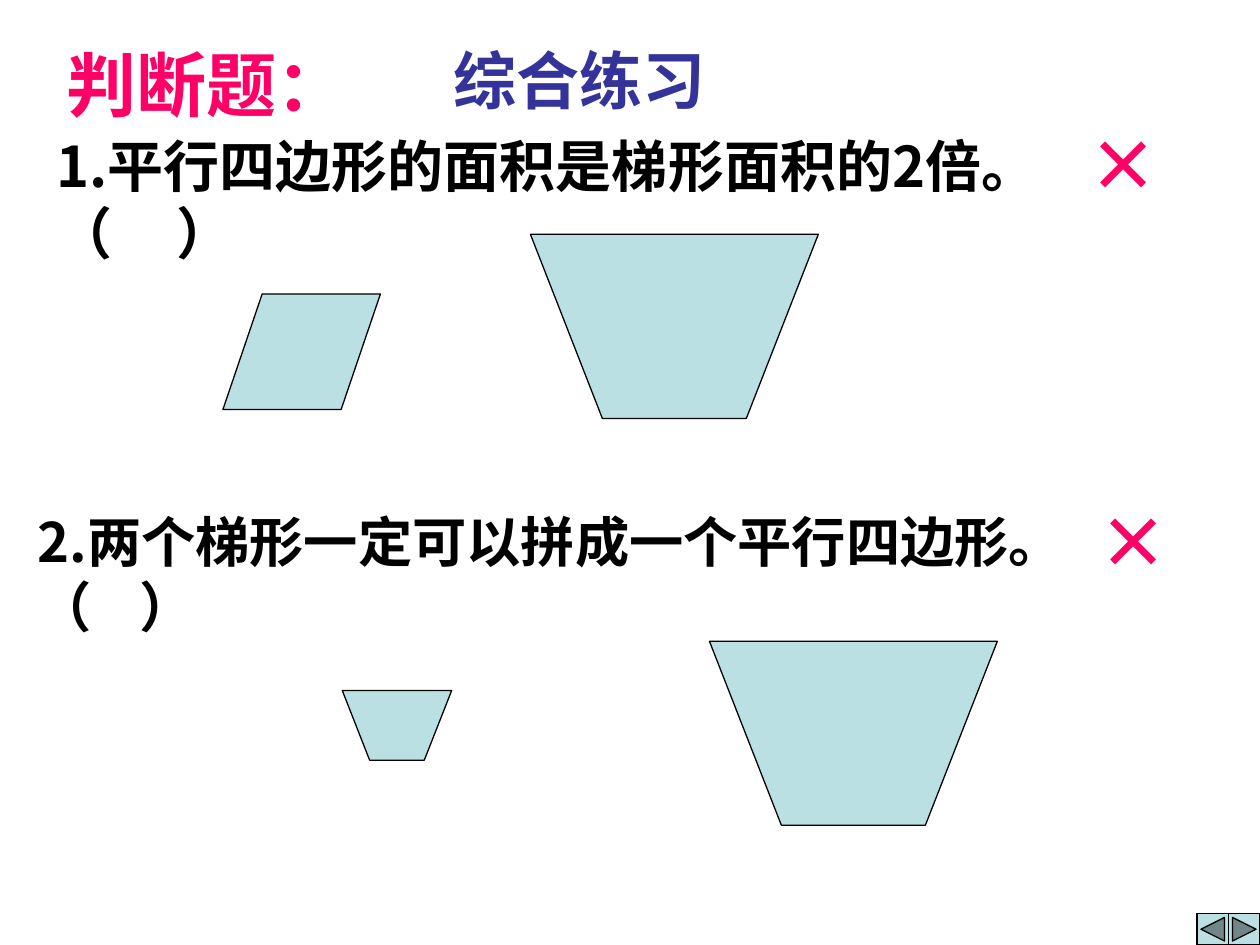
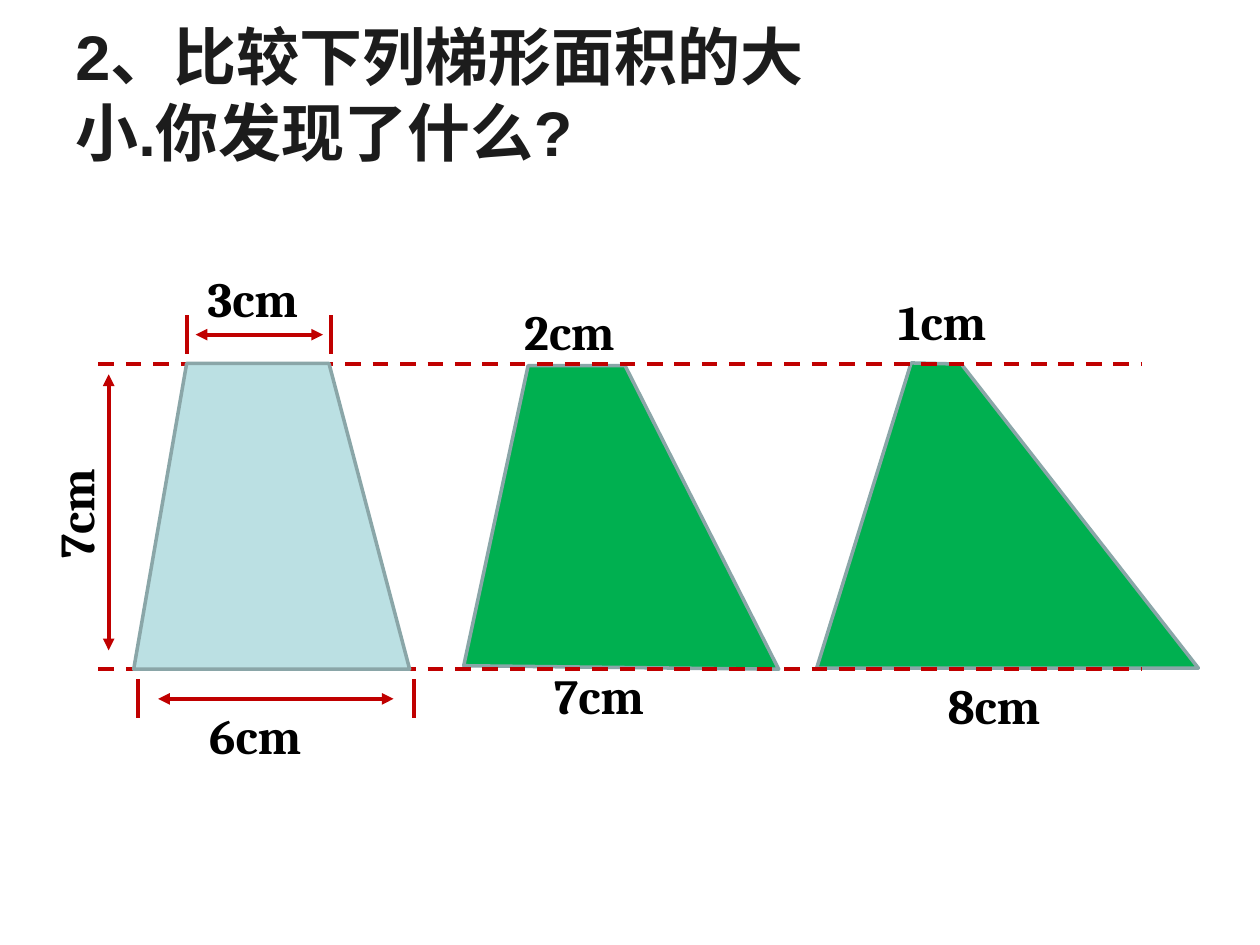
import pptx
import pptx.dml.color
import pptx.enum.dml
import pptx.enum.shapes
import pptx.enum.text
import pptx.oxml
import pptx.oxml.ns
import pptx.util
from lxml import etree

Pt = pptx.util.Pt
SHAPES = pptx.enum.shapes.MSO_SHAPE
ANCHORS = pptx.enum.text.MSO_ANCHOR

CJK_FONT = "Noto Sans CJK SC"
PINK, INDIGO, BLACK, CHARCOAL = "FF0066", "333399", "000000", "1C1C1C"
PALE_BLUE, GREEN, GREY, RED = "BBE0E3", "00B050", "8AA6A8", "C00000"
CJK_LINE_HEIGHT = 1.2
LABEL_SIZE = (84.2, 41)


def rgb(value):
    return pptx.dml.color.RGBColor.from_string(value)


def add_child(parent, tag, **attributes):
    child = etree.SubElement(parent, pptx.oxml.ns.qn(tag))
    for name, value in attributes.items():
        child.set(name, str(value))
    return child


def add_text(slide, text, left, top, width, height, size, color=BLACK,
             font=CJK_FONT, anchor=ANCHORS.TOP, tab=None, rotation=0,
             margin_right=7.2):
    box = slide.shapes.add_textbox(Pt(left), Pt(top), Pt(width), Pt(height))
    box.rotation = rotation
    frame_format = {"word_wrap": True, "vertical_anchor": anchor,
                    "margin_right": Pt(margin_right)}
    for name, value in frame_format.items():
        setattr(box.text_frame, name, value)
    paragraph = box.text_frame.paragraphs[0]
    paragraph.text = text
    if font != "Cambria":
        paragraph.line_spacing = Pt(round(size * CJK_LINE_HEIGHT, 1))
    if tab:
        properties = paragraph._p.get_or_add_pPr()
        tabs = add_child(properties, "a:tabLst")
        add_child(tabs, "a:tab", pos=Pt(tab), algn="l")
    for run in paragraph.runs:
        font_format = {"name": font, "size": Pt(size), "bold": True}
        for name, value in font_format.items():
            setattr(run.font, name, value)
        run.font.color.rgb = rgb(color)
        add_child(run._r.get_or_add_rPr(), "a:ea", typeface=CJK_FONT)


def paint(shape, fill, line, width):
    shape.shadow.inherit = False
    shape.fill.solid()
    shape.fill.fore_color.rgb = rgb(fill)
    shape.line.color.rgb = rgb(line)
    shape.line.width = Pt(width)


def add_preset(slide, kind, left, top, width, height):
    shape = slide.shapes.add_shape(kind, Pt(left), Pt(top), Pt(width), Pt(height))
    paint(shape, PALE_BLUE, BLACK, 0.75)
    return shape


def add_polygon(slide, left, top, corners, fill=PALE_BLUE, line=BLACK, width=0.75):
    points = [(Pt(left + x), Pt(top + y)) for x, y in corners]
    builder = slide.shapes.build_freeform(*points[0])
    builder.add_line_segments(points[1:], close=True)
    paint(builder.convert_to_shape(), fill, line, width)


def add_inverted_trapezoid(slide, left, top, width, height):
    corners = [(0, 0), (width / 4, height), (width * 3 / 4, height), (width, 0)]
    add_polygon(slide, left, top, corners)


def add_line(slide, start_x, start_y, end_x, end_y, dashed=False, arrows=False):
    line = slide.shapes.add_connector(
        pptx.enum.shapes.MSO_CONNECTOR.STRAIGHT,
        Pt(start_x), Pt(start_y), Pt(end_x), Pt(end_y))
    line.line.color.rgb = rgb(RED)
    line.line.width = Pt(2.25)
    if dashed:
        line.line.dash_style = pptx.enum.dml.MSO_LINE.DASH
    if arrows:
        for tag in ("a:headEnd", "a:tailEnd"):
            add_child(line.line._get_or_add_ln(), tag, type="triangle")
    add_child(line._element.spPr, "a:effectLst")


def add_question(slide, left, top, width, text, size, tab, mark_offset):
    """Add a true-or-false statement with its answer mark."""
    add_text(slide, text, left, top, width, 45, size, tab=tab)
    add_text(slide, "×", left + mark_offset, top - 5.8, 51, 55.4, 40, PINK)


def add_navigation(slide, left, top, size):
    kinds = (SHAPES.ACTION_BUTTON_BACK_OR_PREVIOUS,
             SHAPES.ACTION_BUTTON_FORWARD_OR_NEXT)
    for index, kind in enumerate(kinds):
        add_preset(slide, kind, left + index * size, top, size, size)


def add_dimension(slide, left, top, width, inset):
    """Add two end ticks with a double arrow between them."""
    tick = 22.3
    for x in (left, left + width):
        add_line(slide, x, top, x, top + tick)
    middle = top + tick / 2
    add_line(slide, left + inset, middle, left + width - inset, middle, arrows=True)


def add_comparison(slide, left, top, width, height):
    """Add three trapezoids of equal height between two dashed lines."""
    green_trapezoids = [
        [(245.6, 0.8), (301, 0.8), (388.8, height), (208.8, height - 2)],
        [(493.2, 0), (464.5, -0.7), (410.5, height - 0.6), (628.6, height - 0.6)],
    ]
    for corners in green_trapezoids:
        add_polygon(slide, left, top, corners, GREEN, GREY, 2)
    for y in (top + height, top):
        add_line(slide, left, y, left + width, y, dashed=True)
    add_line(slide, left + 5.9, top + 5.8, left + 5.9, top + 163.5, arrows=True)
    blue_corners = [(50.5, -0.5), (131.8, -0.5), (177.9, height), (20.2, height)]
    add_polygon(slide, left, top, blue_corners, PALE_BLUE, GREY, 2)

    add_dimension(slide, left + 22.6, top + height + 5.8, 157.7, 11.6)
    add_dimension(slide, left + 50.8, top - 28, 82.4, 4.8)

    labels = [
        ("2cm", 236.3, -39.5, 0), ("7cm", 253.4, 168.4, 0),
        ("1cm", 450, -44.8, 0), ("8cm", 478.2, 174.3, 0),
        ("3cm", 55.4, -58.2, 0), ("6cm", 56.3, 191.6, 0),
        ("7cm", -55.4, 55.5, 270),
    ]
    for text, x, y, rotation in labels:
        add_text(slide, text, left + x, top + y, *LABEL_SIZE, 28,
                 font="Cambria", rotation=rotation)


def build_judgement_slide(slide):
    add_text(slide, "判断题：", 31, 20.4, 336, 55.4, 40, PINK)
    add_text(slide, "综合练习", 252, 20.4, 175.7, 50.4, 36, INDIGO)

    add_question(slide, 25.2, 71.5, 694.8,
                 "1.平行四边形的面积是梯形面积的2倍。\v（\t）", 32, 68.5, 589.7)
    parallelogram = add_preset(slide, SHAPES.PARALLELOGRAM, 127.4, 168, 90, 66)
    parallelogram.adjustments[0] = 0.34
    add_inverted_trapezoid(slide, 303.1, 133.9, 164.5, 105.2)

    add_question(slide, 14.4, 287, 689,
                 "2.两个梯形一定可以拼成一个平行四边形。\v（\t）", 31, 58.5, 606.2)
    add_inverted_trapezoid(slide, 405.4, 366.5, 164.5, 105.1)
    add_inverted_trapezoid(slide, 195.6, 394.6, 62.5, 39.8)
    add_navigation(slide, 684, 522, 18)


def build_comparison_slide(slide):
    add_text(slide, "2、比较下列梯形面积的大小.你发现了什么?", 36, 32.9, 482.4, 67,
             36, CHARCOAL, "Arial", ANCHORS.BOTTOM, margin_right=36)
    add_comparison(slide, 56.2, 208.1, 596.2, 174.3)


def main():
    presentation = pptx.Presentation()
    presentation.slide_width = Pt(720)
    presentation.slide_height = Pt(540)
    for build in (build_judgement_slide, build_comparison_slide):
        build(presentation.slides.add_slide(presentation.slide_layouts[6]))
    presentation.save("out.pptx")


if __name__ == "__main__":
    main()
